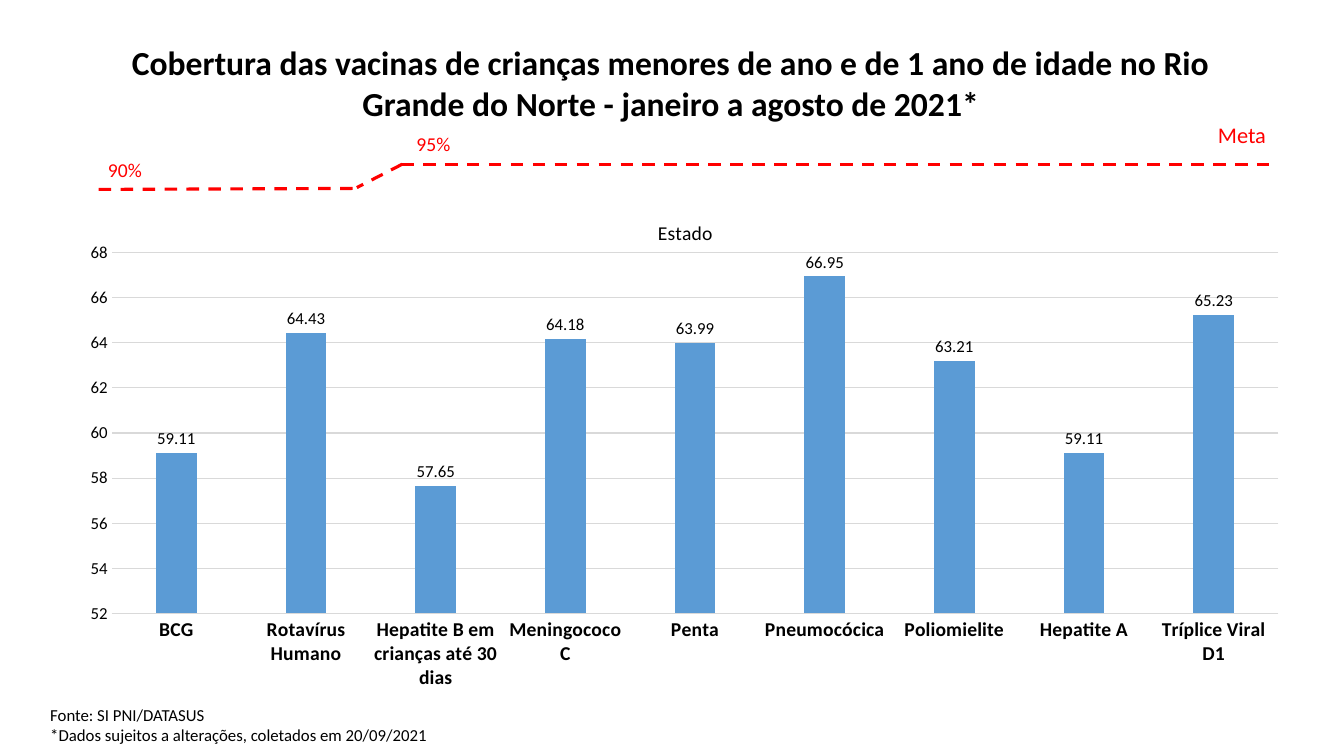
from pptx import Presentation
from pptx.chart.data import CategoryChartData
from pptx.dml.color import RGBColor
from pptx.enum.chart import XL_CHART_TYPE as ChartType
from pptx.enum.chart import XL_LABEL_POSITION as LabelPosition
from pptx.enum.chart import XL_TICK_MARK as TickMark
from pptx.enum.dml import MSO_LINE_DASH_STYLE as Dash
from pptx.enum.shapes import MSO_CONNECTOR as Connector
from pptx.enum.text import MSO_ANCHOR as Anchor
from pptx.enum.text import PP_ALIGN as Align
from pptx.oxml import parse_xml
from pptx.oxml.ns import nsdecls, qn
from pptx.util import Pt

BLACK = RGBColor(0x00, 0x00, 0x00)
RED = RGBColor(0xFF, 0x00, 0x00)
BLUE = RGBColor(0x5B, 0x9B, 0xD5)
GRAY = RGBColor(0xD9, 0xD9, 0xD9)
FONT = "Calibri"

TITLE = ("Cobertura das vacinas de crianças menores de ano e de 1 ano de idade "
         "no Rio Grande do Norte - janeiro a agosto de 2021*")
SOURCE = "Fonte: SI PNI/DATASUS\n*Dados sujeitos a alterações, coletados em 20/09/2021"
COVERAGE = {
    "BCG": 59.11,
    "Rotavírus Humano": 64.43,
    "Hepatite B em crianças até 30 dias": 57.65,
    "Meningococo C": 64.18,
    "Penta": 63.99,
    "Pneumocócica": 66.95,
    "Poliomielite": 63.21,
    "Hepatite A": 59.11,
    "Tríplice Viral D1": 65.23,
}
TARGET_LINES = [
    (70.5, 135.3, 252.7, 134.6),
    (287.3, 117.3, 254.9, 134),
    (286.5, 117.3, 911.5, 117.3),
]
TARGET_LABELS = [
    ("90%", 69.8, 109.4, 38.9, 24.2, 14),
    ("95%", 290.2, 90.7, 38.9, 24.2, 14),
    ("Meta", 862.6, 82.8, 49, 26.6, 16),
]
PLOT_LAYOUT = {"x": 0.028, "y": 0.104, "w": 0.96, "h": 0.722}


def style_font(font, size, color=BLACK, bold=False):
    """Apply the slide's typeface with a size, colour and weight."""
    font.name = FONT
    font.size = Pt(size)
    font.bold = bold
    font.color.rgb = color


def fill_text(frame, text, size, color=BLACK, bold=False, align=Align.LEFT):
    """Write text into a frame and format its paragraphs."""
    frame.text = text
    for paragraph in frame.paragraphs:
        paragraph.alignment = align
        for run in paragraph.runs:
            style_font(run.font, size, color, bold)


def place_title(slide):
    """Move and format the title placeholder."""
    title = slide.shapes.title
    title.left, title.top, title.width, title.height = Pt(55.4), Pt(26.6), Pt(847.4), Pt(65.5)
    title.text_frame.vertical_anchor = Anchor.TOP
    fill_text(title.text_frame, TITLE, 24, bold=True, align=Align.CENTER)


def add_label(slide, text, left, top, width, height, size, color=RED,
              align=Align.CENTER, wrap=False):
    """Add a text box."""
    frame = slide.shapes.add_textbox(Pt(left), Pt(top), Pt(width), Pt(height)).text_frame
    frame.word_wrap = wrap
    fill_text(frame, text, size, color, align=align)


def add_target_line(slide, *ends):
    """Add one dashed segment of the coverage target."""
    segment = slide.shapes.add_connector(Connector.STRAIGHT, *map(Pt, ends))
    segment.line.color.rgb = RED
    segment.line.width = Pt(2.25)
    segment.line.dash_style = Dash.DASH
    segment._element.spPr.append(parse_xml(f"<a:effectLst {nsdecls('a')}/>"))


def set_plot_layout(chart):
    """Fix the inner plot area within the chart."""
    plot_area = chart._chartSpace.chart.plotArea
    for layout in plot_area.findall(qn("c:layout")):
        plot_area.remove(layout)
    modes = "".join(f'<c:{axis}Mode val="edge"/>' for axis in "xy")
    sizes = "".join(f'<c:{key} val="{value}"/>' for key, value in PLOT_LAYOUT.items())
    plot_area.insert(0, parse_xml(
        f"<c:layout {nsdecls('c')}><c:manualLayout>"
        f'<c:layoutTarget val="inner"/>{modes}{sizes}'
        "</c:manualLayout></c:layout>"))


def format_axes(chart):
    """Format the vaccine and coverage axes."""
    vaccines, coverage = chart.category_axis, chart.value_axis
    for axis, size, bold in ((vaccines, 14, True), (coverage, 12, False)):
        axis.major_tick_mark = axis.minor_tick_mark = TickMark.NONE
        style_font(axis.tick_labels.font, size, bold=bold)
    coverage.minimum_scale, coverage.maximum_scale, coverage.major_unit = 52, 68, 2
    coverage.format.line.fill.background()
    for line in (vaccines.format.line, coverage.major_gridlines.format.line):
        line.color.rgb = GRAY
        line.width = Pt(0.75)


def add_coverage_chart(slide):
    """Add the column chart of coverage by vaccine."""
    coverage_data = CategoryChartData(number_format="General")
    coverage_data.categories = list(COVERAGE)
    coverage_data.add_series("Estado", list(COVERAGE.values()))
    chart = slide.shapes.add_chart(ChartType.COLUMN_CLUSTERED, Pt(55.4), Pt(143.3),
                                   Pt(868.3), Pt(357.1), coverage_data).chart
    style_font(chart.font, 10)
    chart.has_legend = False
    chart.has_title = True
    fill_text(chart.chart_title.text_frame, "Estado", 14, align=Align.CENTER)
    chart.chart_title.include_in_layout = False
    set_plot_layout(chart)
    format_axes(chart)

    columns = chart.plots[0]
    columns.gap_width, columns.overlap = 219, -27
    columns.vary_by_categories = False
    state = columns.series[0]
    state.format.fill.solid()
    state.format.fill.fore_color.rgb = BLUE
    labels = state.data_labels
    labels.show_value = True
    labels.position = LabelPosition.OUTSIDE_END
    style_font(labels.font, 12)


def main():
    """Build and save the vaccine coverage slide."""
    presentation = Presentation()
    presentation.slide_width, presentation.slide_height = Pt(960), Pt(540)
    slide = presentation.slides.add_slide(presentation.slide_layouts[5])
    place_title(slide)
    add_label(slide, SOURCE, 28.8, 499.7, 501.1, 36, 12, BLACK, Align.LEFT, wrap=True)
    for ends in TARGET_LINES:
        add_target_line(slide, *ends)
    add_coverage_chart(slide)
    for label in TARGET_LABELS:
        add_label(slide, *label)
    presentation.save("out.pptx")


if __name__ == "__main__":
    main()
